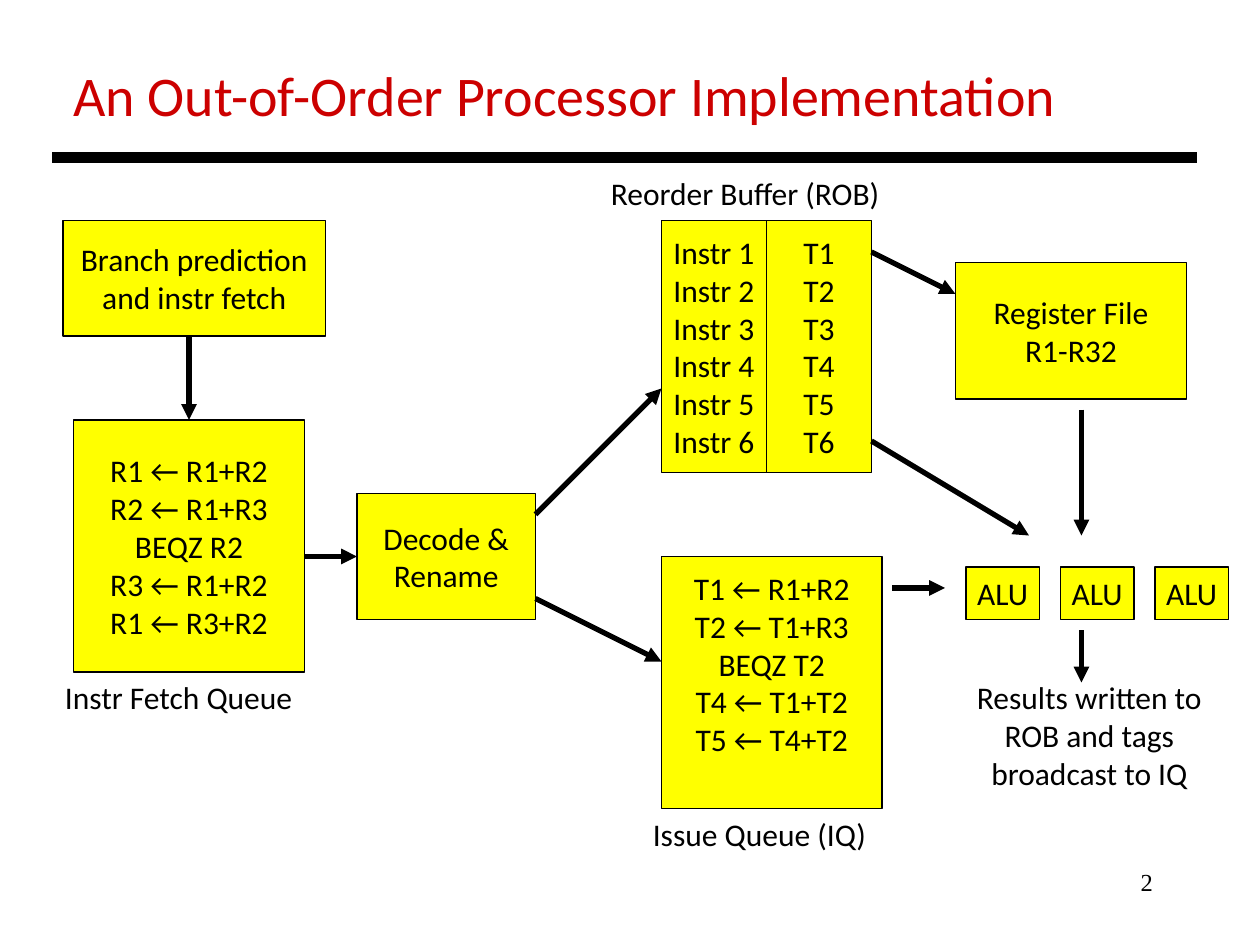
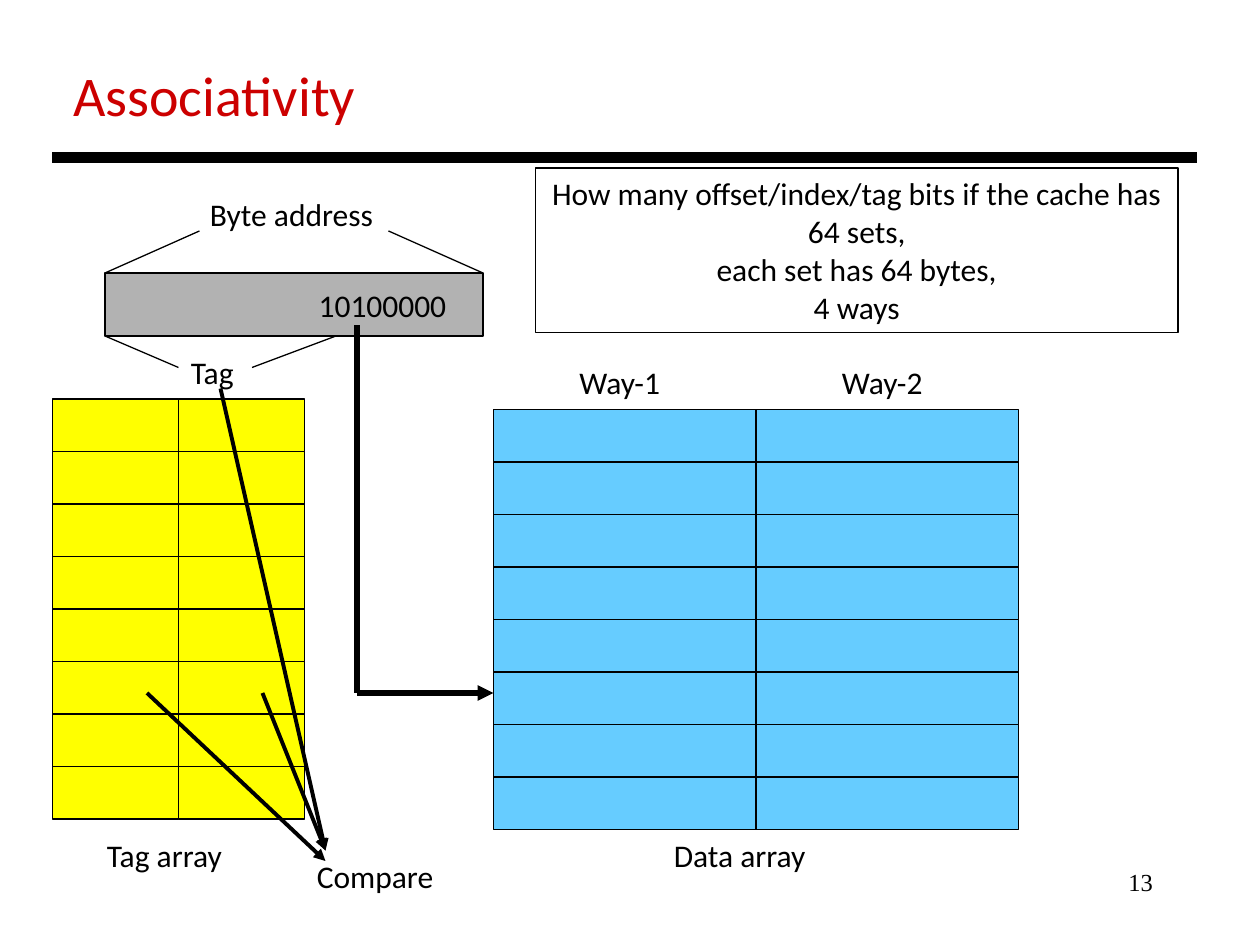
from lxml import etree
from pptx import Presentation
from pptx import util as u
from pptx.dml import color
from pptx.enum import shapes, text
from pptx.oxml import ns

HUE = {"ink": "000000", "title": "CC0000", "box": "FFFF00", "data": "66CCFF", "gray": "B2B2B2"}
AL = text.PP_ALIGN

deck = Presentation()
deck.slide_width, deck.slide_height = u.Inches(10), u.Inches(7.5)
COL = deck.slide_width / 120
ROW = deck.slide_height / 90


def box(page, words, x, y, w, h, fill=None, edge=False, align=AL.CENTER, size=18,
        font="Calibri", tint="ink", top=False):
    area = [round(n) for n in (x * COL, y * ROW, w * COL, h * ROW)]
    if fill or edge:
        item = page.shapes.add_shape(shapes.MSO_SHAPE.RECTANGLE, *area)
        item.shadow.inherit = False
        item.line.color.rgb = color.RGBColor.from_string(HUE["ink"])
        item.line.width = u.Pt(0.75)
        if fill:
            item.fill.solid()
            item.fill.fore_color.rgb = color.RGBColor.from_string(HUE[fill])
        else:
            item.fill.background()
    else:
        item = page.shapes.add_textbox(*area)
    frame = item.text_frame
    frame.word_wrap = False
    frame.vertical_anchor = text.MSO_ANCHOR.MIDDLE if fill and not top else text.MSO_ANCHOR.TOP
    if words:
        frame.text = words
        for para in frame.paragraphs:
            para.alignment = align
            for run in para.runs:
                run.font.size = u.Pt(size)
                run.font.name = font
                run.font.color.rgb = color.RGBColor.from_string(HUE[tint])
    return item


def link(page, x1, y1, x2, y2, wide=3, head=True):
    ends = [round(n) for n in (x1 * COL, y1 * ROW, x2 * COL, y2 * ROW)]
    item = page.shapes.add_connector(shapes.MSO_CONNECTOR.STRAIGHT, *ends)
    item.line.color.rgb = color.RGBColor.from_string(HUE["ink"])
    item.line.width = u.Pt(wide)
    if head:
        etree.SubElement(item.line._get_or_add_ln(), ns.qn("a:tailEnd"), type="triangle")
    etree.SubElement(item._element.spPr, ns.qn("a:effectLst"))


pages = []
for title, num, wide in [("An Out-of-Order Processor Implementation", "2", 97.3),
                         ("Associativity", "13", 29.6)]:
    page = deck.slides.add_slide(deck.slide_layouts[6])
    box(page, num, 86, 82, 25, 6, align=AL.RIGHT, size=14, font="Times New Roman")
    box(page, title, 5.8, 5.2, wide, 7.7, align=AL.LEFT, size=32, tint="title")
    link(page, 5, 15, 114, 15, wide=6, head=False)
    pages.append(page)
flow, cache = pages

for words, x, y, w, h in [
    ("Branch prediction\nand instr fetch", 6, 21, 25, 11),
    ("R1 ← R1+R2\nR2 ← R1+R3\nBEQZ R2\nR3 ← R1+R2\nR1 ← R3+R2", 7, 40, 22, 24),
    ("Decode &\nRename", 34, 47, 17, 12),
    ("\n".join(f"Instr {n}" for n in range(1, 7)), 63, 21, 10, 24),
    ("\n".join(f"T{n}" for n in range(1, 7)), 73, 21, 10, 24),
    ("Register File\nR1-R32", 91, 25, 22, 13),
]:
    box(flow, words, x, y, w, h, fill="box")

queue = box(flow, "T1 ← R1+R2\nT2 ← T1+R3\nBEQZ T2\nT4 ← T1+T2\nT5 ← T4+T2",
            63, 53, 21, 24, fill="box")
queue.text_frame.margin_bottom = u.Inches(0.35)

for n in range(3):
    box(flow, "ALU", 92 + 9 * n, 54, 7, 5, fill="box")

for words, x, y, w in [("Instr Fetch Queue", 5, 64, 24.4),
                       ("Reorder Buffer (ROB)", 57, 16, 28.3),
                       ("Issue Queue (IQ)", 61, 77, 23)]:
    box(flow, words, x, y, w, 4.8, align=AL.LEFT)
box(flow, "Results written to\nROB and tags\nbroadcast to IQ", 91.7, 64, 24.1, 12.1)

for ends in [(18, 32, 18, 40), (29, 53, 34, 53), (51, 49, 63, 37), (51, 57, 63, 63),
             (85, 56, 90, 56), (103, 39, 103, 51), (83, 42, 98, 51),
             (103, 60, 103, 65), (83, 24, 91, 28)]:
    link(flow, *ends)

for fill, left, top, wide in [("data", 47, 39, 25), ("box", 5, 38, 12)]:
    for way in range(2):
        for line in range(8):
            box(cache, "", left + way * wide, top + line * 5, wide, 5, fill=fill)

byte = box(cache, "10100000", 10, 26, 36, 6, fill="gray", align=AL.RIGHT)
byte.text_frame.margin_right = u.Inches(0.29)
box(cache, "How many offset/index/tag bits if the cache has\n64 sets,\n"
    "each set has 64 bytes,\n4 ways", 51, 16, 61.2, 15.7, edge=True)

for words, x, y, w in [("Byte address", 18.8, 18, 18.1), ("Tag", 17, 33, 6.6),
                       ("Data array", 63, 79, 15.1), ("Tag array", 9, 79, 13.4),
                       ("Way-1", 54, 34, 10.2), ("Way-2", 79, 34, 10.2),
                       ("Compare", 29, 81, 13.7)]:
    box(cache, words, x, y, w, 4.8, align=AL.LEFT)

for ends in [(19, 22, 10, 26), (37, 22, 46, 26), (24, 35, 32, 32), (10, 32, 17, 35)]:
    link(cache, *ends, wide=0.75, head=False)
link(cache, 34, 31, 34, 66, head=False)
link(cache, 34, 66, 47, 66)
for ends in [(14, 66, 31, 82), (25, 66, 31, 81), (21, 37, 31, 81)]:
    link(cache, *ends, wide=2.25)

deck.save("out.pptx")
